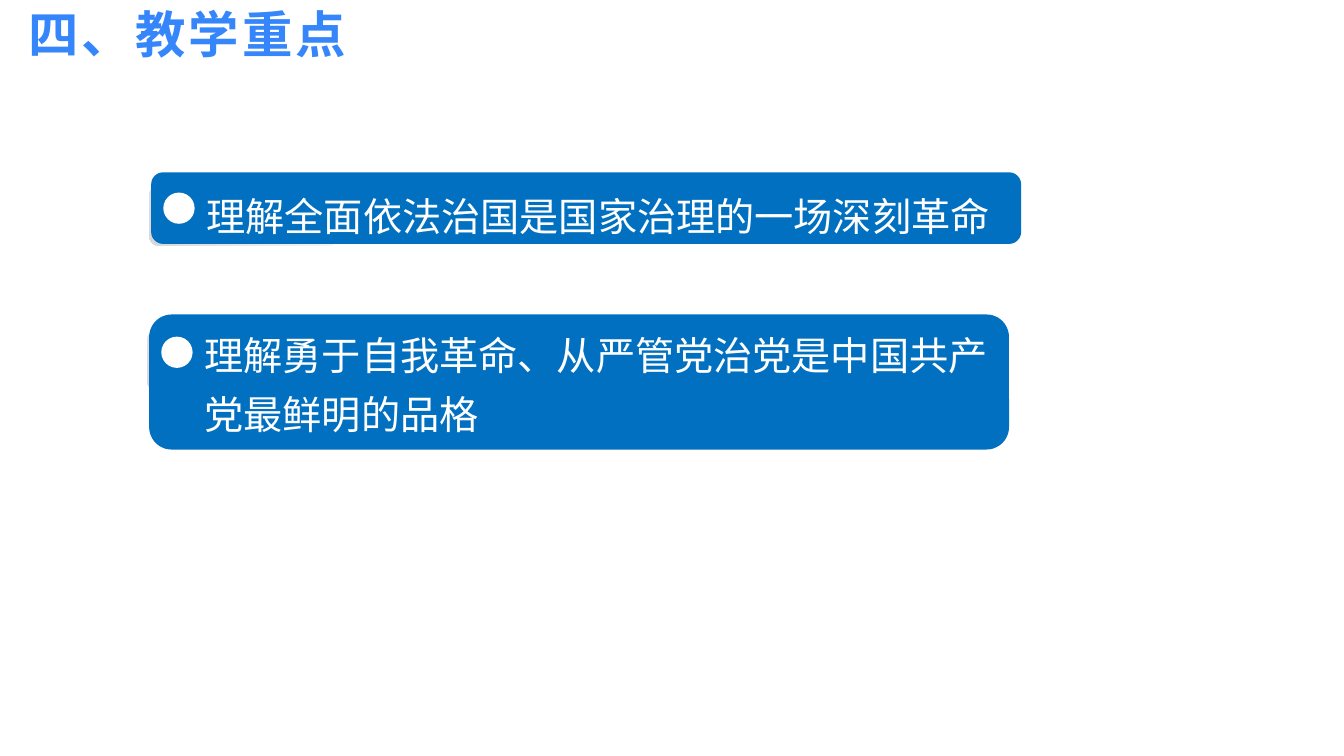
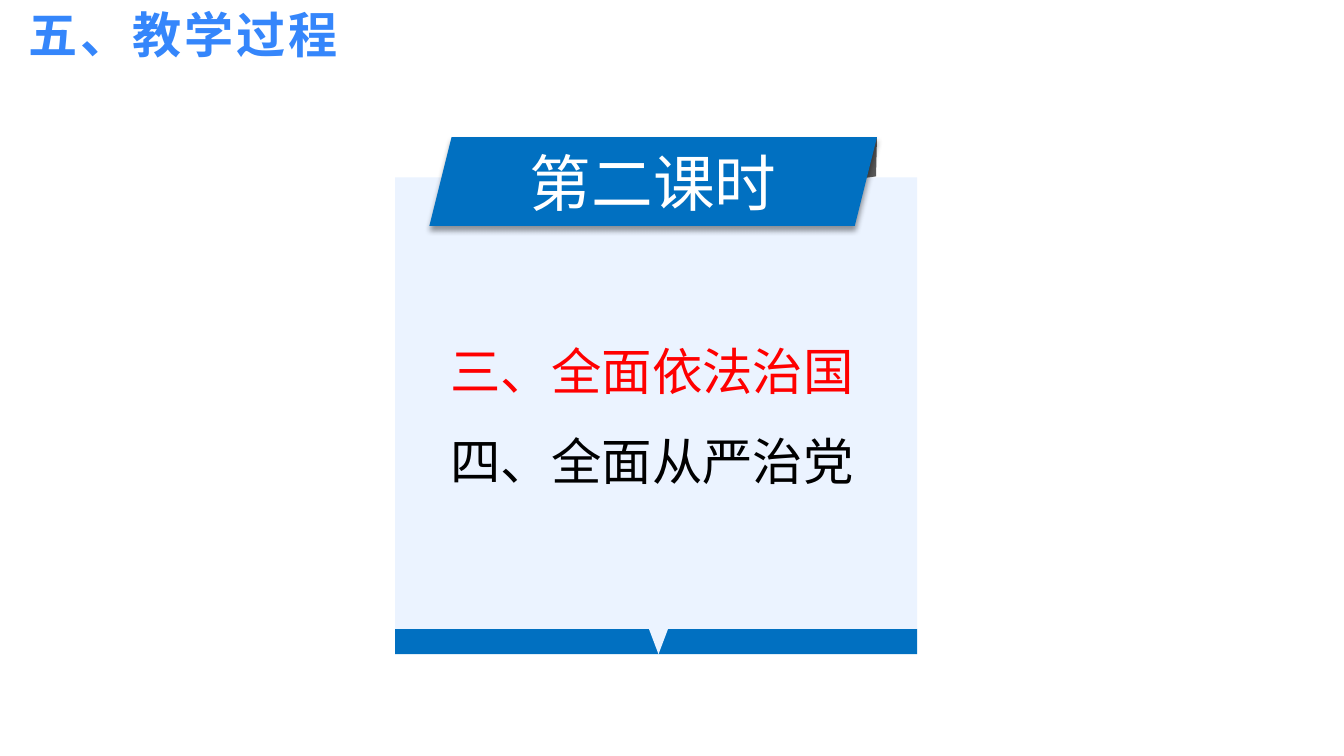
from dataclasses import dataclass

from lxml import etree
from pptx import Presentation
from pptx.dml.color import RGBColor
from pptx.enum.shapes import MSO_SHAPE
from pptx.enum.text import MSO_ANCHOR, MSO_AUTO_SIZE, PP_ALIGN
from pptx.oxml.ns import qn
from pptx.util import Inches, Pt

RECTANGLE = MSO_SHAPE.RECTANGLE
ROUNDED = MSO_SHAPE.ROUNDED_RECTANGLE
OVAL = MSO_SHAPE.OVAL
PARALLELOGRAM = MSO_SHAPE.PARALLELOGRAM
MIDDLE = MSO_ANCHOR.MIDDLE
BOTTOM = MSO_ANCHOR.BOTTOM
CENTER = PP_ALIGN.CENTER
FIT_SHAPE = MSO_AUTO_SIZE.SHAPE_TO_FIT_TEXT

SLIDE_WIDTH = Inches(13.33)
SLIDE_HEIGHT = Inches(7.5)


@dataclass(frozen=True)
class Theme:
    font: str = "Noto Sans CJK SC"
    title: str = "3586FB"
    primary: str = "0170C1"
    panel: str = "EBF3FF"
    fold: str = "595959"
    tab_edge: str = "D9D9D9"
    white: str = "FFFFFF"
    black: str = "000000"
    highlight: str = "FF0000"
    title_size: float = 36
    title_spacing: int = 220
    banner_size: float = 44
    item_size: float = 36
    card_size: float = 28


@dataclass(frozen=True)
class Card:
    text: str
    left: float
    top: float
    width: float
    height: float
    tab_drop: float
    dot_drop: float
    text_drop: float
    text_width: float
    text_height: float
    line_spacing: float
    wrap: bool


THEME = Theme()

CARDS = (
    Card("理解全面依法治国是国家治理的一场深刻革命",
         11.25, 22.8, 64.73, 9.47, 1.73, 2.67, -1.07, 60.45, 9.6, 1.5, False),
    Card("理解勇于自我革命、从严管党治党是中国共产党最鲜明的品格",
         11.1, 41.6, 63.98, 17.87, 2.13, 2.93, 0, 60.08, 17.07, 1.25, True),
)


def across(percent):
    return round(SLIDE_WIDTH * percent / 100)


def down(percent):
    return round(SLIDE_HEIGHT * percent / 100)


def area(left, top, width, height):
    return across(left), down(top), across(width), down(height)


def paint(shape, color):
    shape.shadow.inherit = False
    shape.fill.solid()
    shape.fill.fore_color.rgb = RGBColor.from_string(color)
    shape.line.fill.background()


def add_block(shapes, kind, box, color):
    shape = shapes.add_shape(kind, *area(*box))
    paint(shape, color)
    return shape


def add_outline(shapes, points, color):
    corners = [(across(x), down(y)) for x, y in points]
    builder = shapes.build_freeform(*corners[0])
    builder.add_line_segments(corners[1:], close=True)
    paint(builder.convert_to_shape(), color)


def style_run(run, size, color, bold=False, spacing=0):
    run.font.name = THEME.font
    run.font.size = Pt(size)
    run.font.bold = bold
    run.font.color.rgb = RGBColor.from_string(color)
    properties = run.font._element
    latin = properties.find(qn("a:latin"))
    east_asian = etree.Element(qn("a:ea"), typeface=THEME.font)
    latin.addnext(east_asian)
    if spacing:
        properties.set("spc", str(spacing))


def add_text(shapes, box, lines, size, line_spacing, wrap):
    text_box = shapes.add_textbox(*area(*box))
    frame = text_box.text_frame
    frame.text = "\n".join(text for text, _ in lines)
    frame.word_wrap = wrap
    frame.auto_size = FIT_SHAPE
    for paragraph, (_, color) in zip(frame.paragraphs, lines):
        paragraph.line_spacing = line_spacing
        style_run(paragraph.runs[0], size, color)


def add_title(slide, text, size=THEME.title_size):
    frame = slide.shapes.add_textbox(*area(1.58, 0, 47.78, 8.8)).text_frame
    frame.text = text
    frame.word_wrap = True
    frame.vertical_anchor = BOTTOM
    frame.margin_left = frame.margin_right = Inches(0.07)
    frame.margin_top = frame.margin_bottom = Inches(0.03)
    style_run(frame.paragraphs[0].runs[0], size, THEME.title, True, THEME.title_spacing)


def add_card(slide, card):
    shapes = slide.shapes
    tab = add_block(shapes, ROUNDED,
                    (card.left - 0.15, card.top + card.tab_drop, 14.1, 8), THEME.white)
    tab.fill.gradient()
    tab.fill.gradient_angle = 225
    for stop, color in zip(tab.fill.gradient_stops, (THEME.white, THEME.tab_edge)):
        stop.color.rgb = RGBColor.from_string(color)
    add_block(shapes, ROUNDED, (card.left, card.top, card.width, card.height), THEME.primary)
    add_block(shapes, OVAL,
              (card.left + 0.9, card.top + card.dot_drop, 2.33, 4.13), THEME.white)
    add_text(shapes,
             (card.left + 3.38, card.top + card.text_drop, card.text_width, card.text_height),
             [(card.text, THEME.white)], THEME.card_size, card.line_spacing, card.wrap)


def add_drop_shadow(shape):
    effects = shape._element.spPr.find(qn("a:effectLst"))
    shadow = etree.SubElement(effects, qn("a:outerShdw"), blurRad=str(Pt(4)),
                              dist=str(Pt(3)), dir="5400000", algn="t", rotWithShape="0")
    color = etree.SubElement(shadow, qn("a:srgbClr"), val=THEME.black)
    etree.SubElement(color, qn("a:alpha"), val="40000")


def add_banner(shapes, box, text):
    banner = add_block(shapes, PARALLELOGRAM, box, THEME.primary)
    add_drop_shadow(banner)
    frame = banner.text_frame
    frame.text = text
    frame.vertical_anchor = MIDDLE
    paragraph = frame.paragraphs[0]
    paragraph.alignment = CENTER
    style_run(paragraph.runs[0], THEME.banner_size, THEME.white)


def add_lesson_panel(slide, heading):
    left, top, width = 29.4, 23.47, 38.85
    right = left + width
    base, base_height = 83.2, 3.33
    notch, notch_half = 49, 0.71
    banner_left, banner_top, banner_width = 31.95, 18.13, 33.3
    banner_right = banner_left + banner_width
    shapes = slide.shapes.add_group_shape().shapes
    add_block(shapes, RECTANGLE, (left, base, width, base_height), THEME.primary)
    add_outline(shapes, [(left, top), (right, top), (right, base),
                         (notch + notch_half, base), (notch, base + base_height),
                         (notch - notch_half, base), (left, base)], THEME.panel)
    add_outline(shapes, [(banner_right, banner_top), (63.6, 23.73), (65.18, 23.33)],
                THEME.fold)
    add_banner(shapes, (banner_left, banner_top, banner_width, 11.73), heading)


def main():
    presentation = Presentation()
    presentation.slide_width = SLIDE_WIDTH
    presentation.slide_height = SLIDE_HEIGHT
    blank = presentation.slide_layouts[6]

    focus = presentation.slides.add_slide(blank)
    add_title(focus, "四、教学重点")
    for card in CARDS:
        add_card(focus, card)

    process = presentation.slides.add_slide(blank)
    add_title(process, "五、教学过程", 35.1)
    add_lesson_panel(process, "第二课时")
    add_text(process.shapes, (32.78, 40.27, 31.5, 25.6),
             [("三、全面依法治国", THEME.highlight), ("四、全面从严治党", THEME.black)],
             THEME.item_size, 1.5, False)

    presentation.save("out.pptx")


if __name__ == "__main__":
    main()
